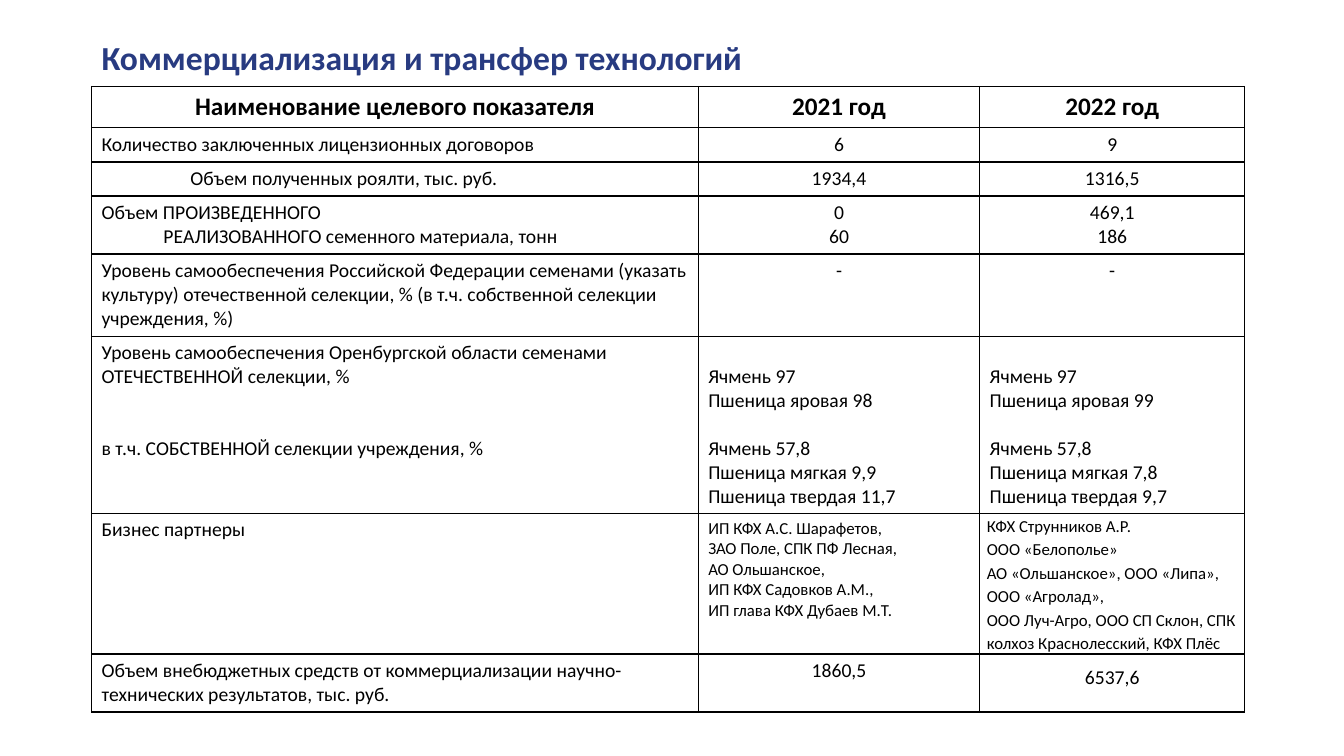
from dataclasses import dataclass

from lxml import etree
from pptx import Presentation
from pptx.dml.color import RGBColor
from pptx.enum.text import MSO_ANCHOR, PP_ALIGN
from pptx.oxml.ns import qn
from pptx.util import Cm, Pt

LEFT, CENTER = PP_ALIGN.LEFT, PP_ALIGN.CENTER
TOP = MSO_ANCHOR.TOP


@dataclass(frozen=True)
class Theme:
    font: str = "Calibri"
    title_color: str = "283B81"
    ink: str = "000000"
    title_size: int = 24
    header_size: int = 18
    body_size: int = 14
    partner_size: int = 12
    border: float = 1


THEME = Theme()
BODY_LINE = 17.1  # height of one body line, points


@dataclass
class Line:
    text: str
    indent: float = 0  # first-line indent, cm
    before: float = 0  # space before, points


@dataclass
class Entry:
    """Content of one table cell; margins are side, top and bottom in cm."""
    lines: list
    align: PP_ALIGN = LEFT
    size: int = THEME.body_size
    bold: bool = False
    spacing: float = 1
    margins: tuple = (0.25, 0.13, 0.13)


def name(*lines):
    return Entry(list(lines))


def figure(*values, **style):
    return Entry([Line(value) for value in values], CENTER, **style)


def heading(text):
    return figure(text, size=THEME.header_size, bold=True)


def crops(domestic, own):
    """Domestic varieties, a one-line gap, then the institute's own varieties."""
    first_own, *other_own = own
    lines = [Line(text) for text in domestic]
    lines.append(Line(first_own, before=BODY_LINE))
    lines += [Line(text) for text in other_own]
    return Entry(lines, margins=(0.25, 0.73, 0.13))


def partners(*names, **style):
    return Entry([Line(text) for text in names], size=THEME.partner_size, **style)


TIGHT = (0.18, 0, 0)
COLUMN_WIDTHS = (15.29, 7.09, 6.68)
ROWS = [
    (1.03, heading("Наименование целевого показателя"),
     heading("2021 год"), heading("2022 год")),
    (0.87, name(Line("Количество заключенных лицензионных договоров")),
     figure("6"), figure("9")),
    (0.86, name(Line("Объем полученных роялти, тыс. руб.", indent=2.24)),
     figure("1934,4"), figure("1316,5")),
    (1.46, name(Line("Объем ПРОИЗВЕДЕННОГО"),
                Line("РЕАЛИЗОВАННОГО семенного материала, тонн", indent=1.56)),
     figure("0", "60"), figure("469,1", "186")),
    (2.07, name(Line("Уровень самообеспечения Российской Федерации семенами (указать "
                     "культуру) отечественной селекции, % (в т.ч. собственной селекции "
                     "учреждения, %)")),
     figure("-"), figure("-")),
    (4.46, name(Line("Уровень самообеспечения Оренбургской области семенами "
                     "ОТЕЧЕСТВЕННОЙ селекции, %"),
                Line("в т.ч. СОБСТВЕННОЙ селекции учреждения, %", before=2 * BODY_LINE)),
     crops(["Ячмень 97", "Пшеница яровая 98"],
           ["Ячмень 57,8", "Пшеница мягкая 9,9", "Пшеница твердая 11,7"]),
     crops(["Ячмень 97", "Пшеница яровая 99"],
           ["Ячмень 57,8", "Пшеница мягкая 7,8", "Пшеница твердая 9,7"])),
    (3.55, name(Line("Бизнес партнеры")),
     partners("ИП КФХ А.С. Шарафетов,", "ЗАО Поле, СПК ПФ Лесная,", "АО Ольшанское,",
              "ИП КФХ Садовков А.М.,", "ИП глава КФХ Дубаев М.Т."),
     partners("КФХ Струнников А.Р.", "ООО «Белополье»",
              "АО «Ольшанское», ООО «Липа», ООО «Агролад»,",
              "ООО Луч-Агро, ООО СП Склон, СПК колхоз Краснолесский, КФХ Плёс",
              spacing=1.15, margins=TIGHT)),
    (1.46, name(Line("Объем внебюджетных средств от коммерциализации "
                     "научно-технических результатов, тыс. руб.")),
     figure("1860,5"), figure("6537,6", spacing=1.5, margins=TIGHT)),
]


def style_font(font, size, color, bold):
    font.name = THEME.font
    font.size = Pt(size)
    font.bold = bold
    font.color.rgb = RGBColor.from_string(color)


def add_borders(cell):
    properties = cell._tc.get_or_add_tcPr()
    for position, side in enumerate(("lnL", "lnR", "lnT", "lnB")):
        line = etree.Element(qn(f"a:{side}"), w=str(Pt(THEME.border)))
        fill = etree.SubElement(line, qn("a:solidFill"))
        etree.SubElement(fill, qn("a:srgbClr"), val=THEME.ink)
        properties.insert(position, line)


def fill_cell(cell, entry):
    side, top, bottom = entry.margins
    cell.margin_left = cell.margin_right = Cm(side)
    cell.margin_top, cell.margin_bottom = Cm(top), Cm(bottom)
    cell.vertical_anchor = TOP
    cell.fill.background()
    add_borders(cell)
    cell.text_frame.text = "\n".join(line.text for line in entry.lines)
    for para, line in zip(cell.text_frame.paragraphs, entry.lines):
        para.alignment = entry.align
        para.line_spacing = entry.spacing
        if line.before:
            para.space_before = Pt(line.before)
        if line.indent:
            para._p.get_or_add_pPr().set("indent", str(Cm(line.indent)))
        for span in para.runs:
            style_font(span.font, entry.size, THEME.ink, entry.bold)


def add_title(page, left, top, width, height):
    box = page.shapes.add_textbox(Cm(left), Cm(top), Cm(width), Cm(height))
    frame = box.text_frame
    frame.word_wrap = True
    frame.vertical_anchor = TOP
    frame.text = "Коммерциализация и трансфер технологий"
    style_font(frame.paragraphs[0].runs[0].font, THEME.title_size, THEME.title_color, True)


def add_indicator_table(page, left, top):
    height = sum(row[0] for row in ROWS)
    table = page.shapes.add_table(len(ROWS), len(COLUMN_WIDTHS), Cm(left), Cm(top),
                                  Cm(sum(COLUMN_WIDTHS)), Cm(height)).table
    table.first_row = table.horz_banding = False
    for column, width in zip(table.columns, COLUMN_WIDTHS):
        column.width = Cm(width)
    for row, (row_height, *entries) in zip(table.rows, ROWS):
        row.height = Cm(row_height)
        for cell, entry in zip(row.cells, entries):
            fill_cell(cell, entry)


def main():
    deck = Presentation()
    deck.slide_width, deck.slide_height = Cm(33.87), Cm(19.05)
    page = deck.slides.add_slide(deck.slide_layouts[6])
    add_title(page, 2.31, 0.8, 29.21, 1.3)
    add_indicator_table(page, 2.31, 2.18)
    deck.save("out.pptx")


if __name__ == "__main__":
    main()
